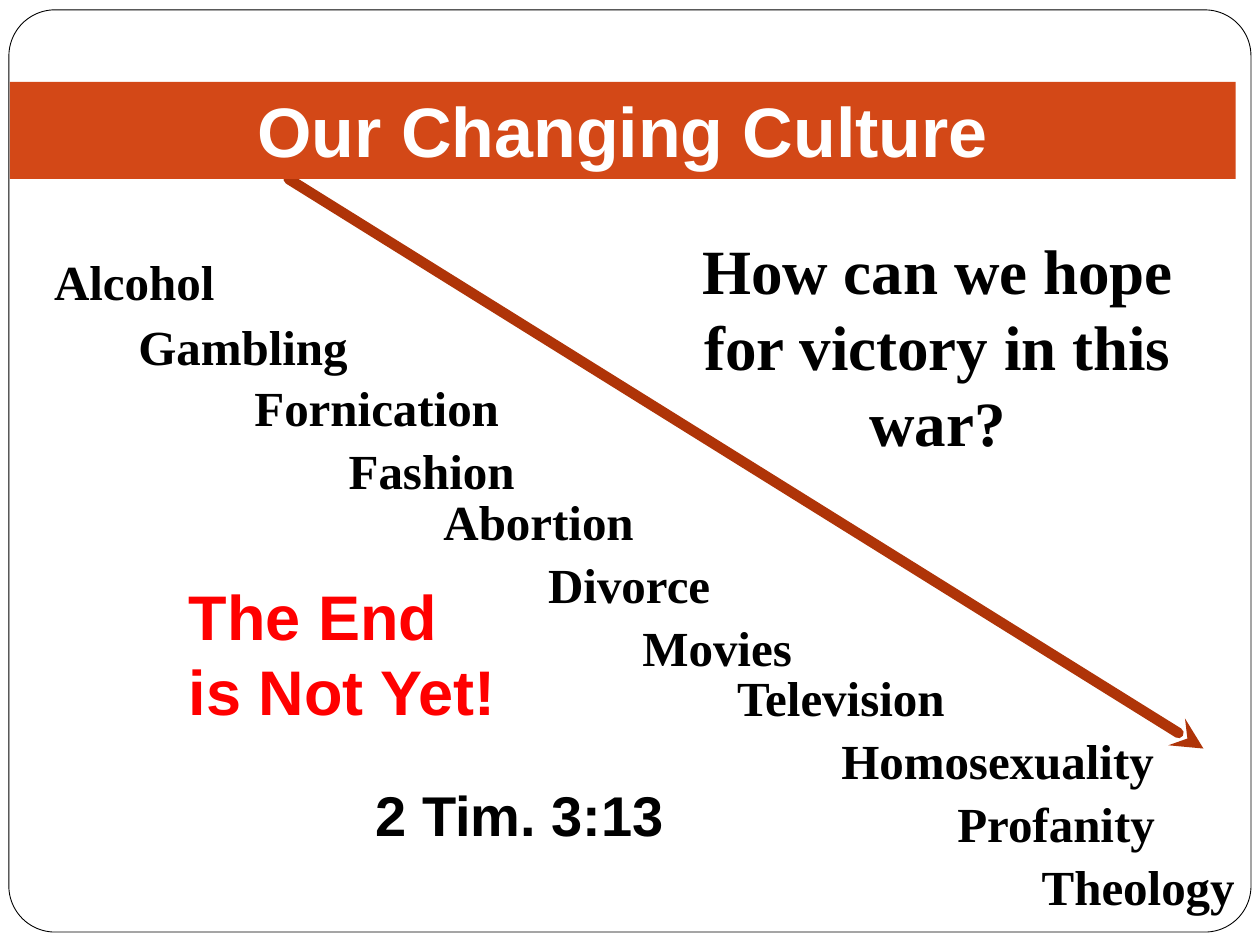
from lxml.etree import SubElement
from pptx import Presentation
from pptx.dml.color import RGBColor
from pptx.enum.shapes import MSO_CONNECTOR, MSO_SHAPE
from pptx.enum.text import MSO_ANCHOR, PP_ALIGN
from pptx.oxml.ns import qn
from pptx.util import Cm, Pt

SERIF = "Times New Roman"
SANS = "Arial"
TOPICS = [
    ("Alcohol", 0.84, 4.95, 6.99),
    ("Gambling", 2.54, 6.25, 6.55),
    ("Fornication", 4.88, 7.49, 5.72),
    ("Fashion", 6.78, 8.76, 4.24),
    ("Abortion", 8.69, 9.78, 4.88),
    ("Divorce", 10.8, 11.05, 4.65),
    ("Movies", 12.7, 12.32, 5.08),
    ("Television", 14.61, 13.34, 5.28),
    ("Homosexuality", 16.71, 14.61, 7.62),
    ("Profanity", 19.05, 15.88, 5.08),
    ("Theology", 20.75, 17.15, 4.65),
]


def color(code):
    return RGBColor.from_string(code)


def place(box):
    return [Cm(side) for side in box]


def write(shape, lines, size, font, ink="000000", align=PP_ALIGN.LEFT):
    frame = shape.text_frame
    frame.word_wrap = True
    para = frame.paragraphs[0]
    para.alignment = align
    for index, line in enumerate(lines):
        if index:
            para.add_line_break()
        run = para.add_run()
        run.text = line
        run.font.size = Pt(size)
        run.font.name = font
        run.font.bold = True
        run.font.color.rgb = color(ink)


def label(slide, box, lines, size, font, **style):
    write(slide.shapes.add_textbox(*place(box)), lines, size, font, **style)


def panel(slide, kind, box, fill, edge=None):
    shape = slide.shapes.add_shape(kind, *place(box))
    shape.shadow.inherit = False
    shape.fill.solid()
    shape.fill.fore_color.rgb = color(fill)
    if edge:
        shape.line.color.rgb = color(edge)
        shape.line.width = Pt(0.5)
    else:
        shape.line.fill.background()
    return shape


def arrow(slide, ends, ink, width):
    link = slide.shapes.add_connector(MSO_CONNECTOR.STRAIGHT, *place(ends))
    link.line.color.rgb = color(ink)
    link.line.width = Pt(width)
    line = link.line._get_or_add_ln()
    line.set("cap", "rnd")
    SubElement(line, qn("a:round"))
    SubElement(line, qn("a:tailEnd"), type="stealth")
    SubElement(link._element.spPr, qn("a:effectLst"))


def main():
    deck = Presentation()
    deck.slide_width, deck.slide_height = Cm(25.4), Cm(19.05)
    slide = deck.slides.add_slide(deck.slide_layouts[6])

    frame = panel(slide, MSO_SHAPE.ROUNDED_RECTANGLE,
                  (0.18, 0.2, 25.04, 18.59), "FFFFFF", "000000")
    frame.adjustments[0] = 0.05
    for name, left, top, width in TOPICS:
        label(slide, (left, top, width, 1.45), [name], 28, SERIF)
    arrow(slide, (5.82, 3.61, 24.26, 15.09), "AF3408", 6)

    title = panel(slide, MSO_SHAPE.RECTANGLE, (0.2, 1.65, 24.71, 1.96), "D34817")
    title.text_frame.vertical_anchor = MSO_ANCHOR.TOP
    write(title, ["Our Changing Culture"], 40, SANS, "FFFFFF", PP_ALIGN.CENTER)

    label(slide, (3.56, 11.51, 7.04, 3.33), ["The End", "is Not Yet!"], 36, SANS,
          ink="FF0000")
    label(slide, (7.32, 15.6, 6.55, 1.63), ["2 Tim. 3:13"], 32, SANS)
    label(slide, (13.77, 4.55, 10.26, 4.88),
          ["How can we hope for victory in this war?"], 36, SERIF,
          align=PP_ALIGN.CENTER)
    deck.save("out.pptx")


if __name__ == "__main__":
    main()
